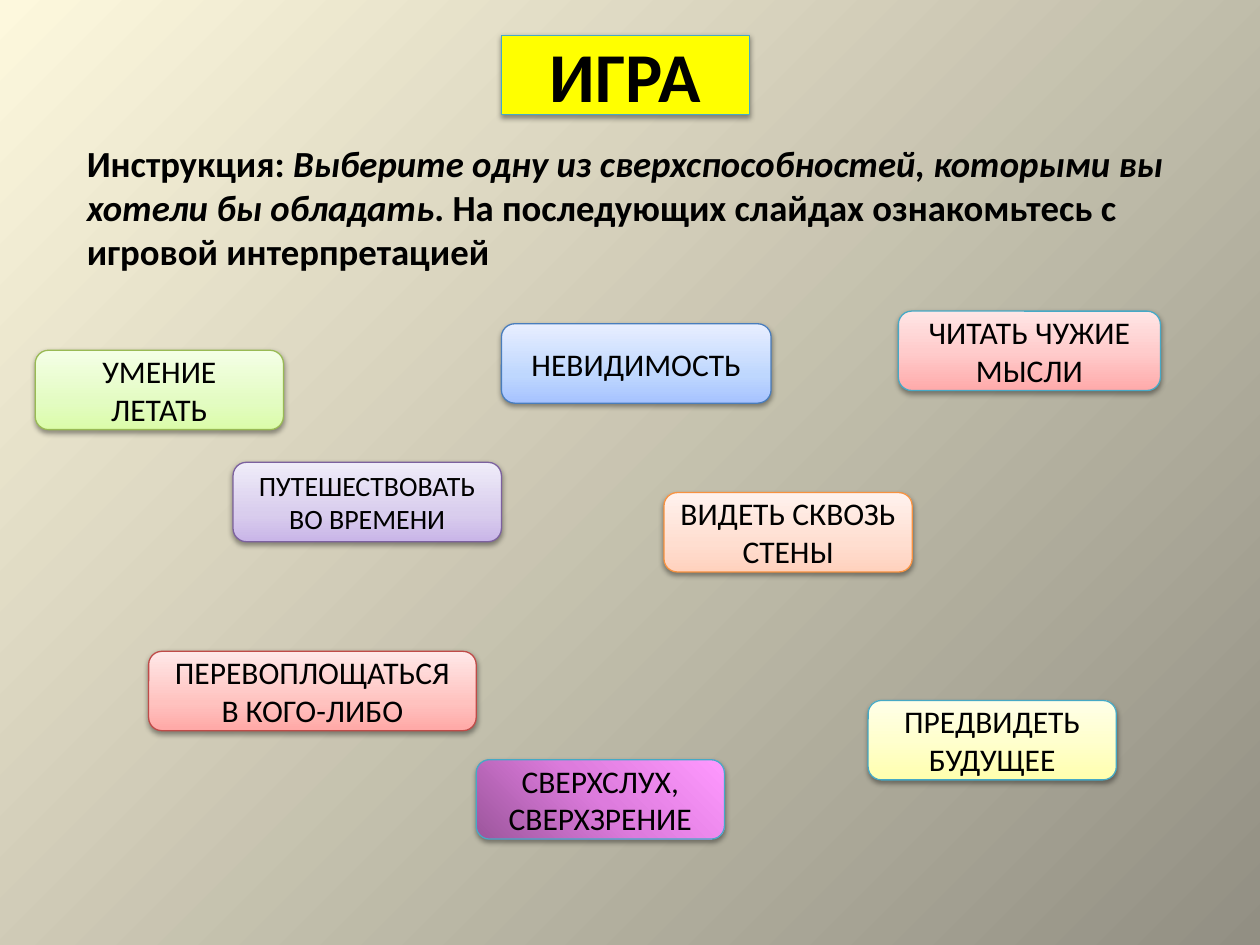
from dataclasses import dataclass

from lxml import etree
from pptx import Presentation
from pptx.dml.color import RGBColor
from pptx.enum.shapes import MSO_SHAPE
from pptx.enum.text import MSO_ANCHOR, MSO_AUTO_SIZE, PP_ALIGN
from pptx.oxml.ns import qn
from pptx.util import Inches, Pt

ROUND = MSO_SHAPE.ROUNDED_RECTANGLE
MIDDLE, TOP = MSO_ANCHOR.MIDDLE, MSO_ANCHOR.TOP
CENTER, LEFT = PP_ALIGN.CENTER, PP_ALIGN.LEFT
FIXED = MSO_AUTO_SIZE.NONE
WIDE, HIGH = Inches(10), Inches(7.5)


@dataclass(frozen=True)
class Theme:
    font: str = "Calibri"
    ink: str = "000000"
    edge: str = "46A9C6"
    head: str = "FFFF00"
    back: tuple = ((0, "FDF8DD"), (100, "928F83"))
    title: int = 40
    body: int = 21
    card: int = 18
    small: int = 16


THEME = Theme()

# Text, box (left, top, width in % of the slide), fill stops, middle stop,
# gradient angle, edge, type size
UP, SLANT = 90, 45
CARDS = [
    ("ЧИТАТЬ ЧУЖИЕ МЫСЛИ", (71.3, 32.93, 20.8),
     "FFAAAA FFCCCC FFE6E6", 50, UP, THEME.edge, THEME.card),
    ("ПРЕДВИДЕТЬ БУДУЩЕЕ", (68.9, 74.13, 19.7),
     "FFFFAE FFFFCE FFFFE8", 50, UP, THEME.edge, THEME.card),
    ("ВИДЕТЬ СКВОЗЬ СТЕНЫ", (52.7, 52.13, 19.7),
     "FFD1BD FFDED0 FFF2EE", 35, UP, "F79240", THEME.card),
    ("НЕВИДИМОСТЬ", (39.8, 34.27, 21.4),
     "A6C2FF BED7FE E8EEFF", 35, UP, "497DBC", THEME.card),
    ("СВЕРХСЛУХ, СВЕРХЗРЕНИЕ", (37.8, 80.4, 19.7),
     "9C569C DD7BDD FF99FF", 50, SLANT, THEME.edge, THEME.card),
    ("ПЕРЕВОПЛОЩАТЬСЯ В КОГО-ЛИБО", (11.8, 68.93, 26),
     "FFA8A6 FFC2BF FFE8E8", 35, UP, "BF4B48", THEME.card),
    ("ПУТЕШЕСТВОВАТЬ ВО ВРЕМЕНИ", (18.5, 48.93, 21.3),
     "C9B5E8 D9CDED EFECF9", 35, UP, "7C619E", THEME.small),
    ("УМЕНИЕ ЛЕТАТЬ", (2.8, 37.07, 19.7),
     "DBFCA9 E3FCC2 F4FFE6", 35, UP, "99BA54", THEME.card),
]
TALL = 8.4


def place(box):
    """Turn shares of the slide into lengths."""
    left, top, width, height = box
    return [int(WIDE * left / 100), int(HIGH * top / 100),
            int(WIDE * width / 100), int(HIGH * height / 100)]


def blend(fill, owner, stops, angle):
    """Give a fill any number of gradient stops."""
    fill.gradient()
    fill.gradient_angle = angle
    group = owner.find(".//" + qn("a:gsLst"))
    for old in list(group):
        group.remove(old)
    for pos, color in stops:
        stop = etree.SubElement(group, qn("a:gs"), pos=str(pos * 1000))
        etree.SubElement(stop, qn("a:srgbClr"), val=color)


def edge(shape, color):
    """Thin outline and a soft shadow below."""
    shape.line.color.rgb = RGBColor.from_string(color)
    shape.line.width = Pt(0.75)
    shape.shadow.inherit = False
    effects = shape.element.spPr.find(qn("a:effectLst"))
    shade = etree.SubElement(effects, qn("a:outerShdw"), blurRad=str(Pt(3.1)),
                             dist=str(Pt(1.6)), dir="5400000", rotWithShape="0")
    tone = etree.SubElement(shade, qn("a:srgbClr"), val="000000")
    etree.SubElement(tone, qn("a:alpha"), val="38000")


def style(shape, size, bold=False, align=CENTER, anchor=MIDDLE):
    frame = shape.text_frame
    frame.word_wrap = True
    frame.auto_size = FIXED
    frame.vertical_anchor = anchor
    for para in frame.paragraphs:
        para.alignment = align
        for run in para.runs:
            run.font.name = THEME.font
            run.font.size = Pt(size)
            run.font.bold = bold
            run.font.color.rgb = RGBColor.from_string(THEME.ink)


def add_title(slide, box):
    title = slide.shapes.title
    title.left, title.top, title.width, title.height = place(box)
    # Rounded outline for the placeholder
    geom = etree.Element(qn("a:prstGeom"), prst="roundRect")
    etree.SubElement(geom, qn("a:avLst"))
    title.element.spPr.find(qn("a:xfrm")).addnext(geom)
    title.fill.solid()
    title.fill.fore_color.rgb = RGBColor.from_string(THEME.head)
    edge(title, THEME.edge)
    title.text_frame.text = "ИГРА"
    style(title, THEME.title, bold=True)


def add_card(slide, box, text, colors, mid, angle, line, size):
    card = slide.shapes.add_shape(ROUND, *place(box))
    blend(card.fill, card.element, zip((0, mid, 100), colors.split()), angle)
    edge(card, line)
    card.text_frame.text = text
    style(card, size)


def add_guide(slide, box):
    guide = slide.shapes.add_textbox(*place(box))
    para = guide.text_frame.paragraphs[0]
    for text, slope in (
        ("Инструкция: ", False),
        ("Выберите одну из сверхспособностей, которыми вы хотели бы обладать", True),
        (". На последующих слайдах ознакомьтесь с игровой интерпретацией", False),
    ):
        run = para.add_run()
        run.text = text
        run.font.italic = slope
    style(guide, THEME.body, bold=True, align=LEFT, anchor=TOP)


def main():
    deck = Presentation()
    deck.slide_width, deck.slide_height = WIDE, HIGH
    slide = deck.slides.add_slide(deck.slide_layouts.get_by_name("Title Only"))

    # Backdrop, light at the top left
    blend(slide.background.fill, slide.element, THEME.back, 315)

    # Heading, superpowers, instruction
    add_title(slide, (39.8, 3.73, 19.7, TALL))
    for text, box, *look in CARDS:
        add_card(slide, (*box, TALL), text, *look)
    add_guide(slide, (5.9, 14.27, 89.8, 15.47))
    deck.save("out.pptx")


if __name__ == "__main__":
    main()
